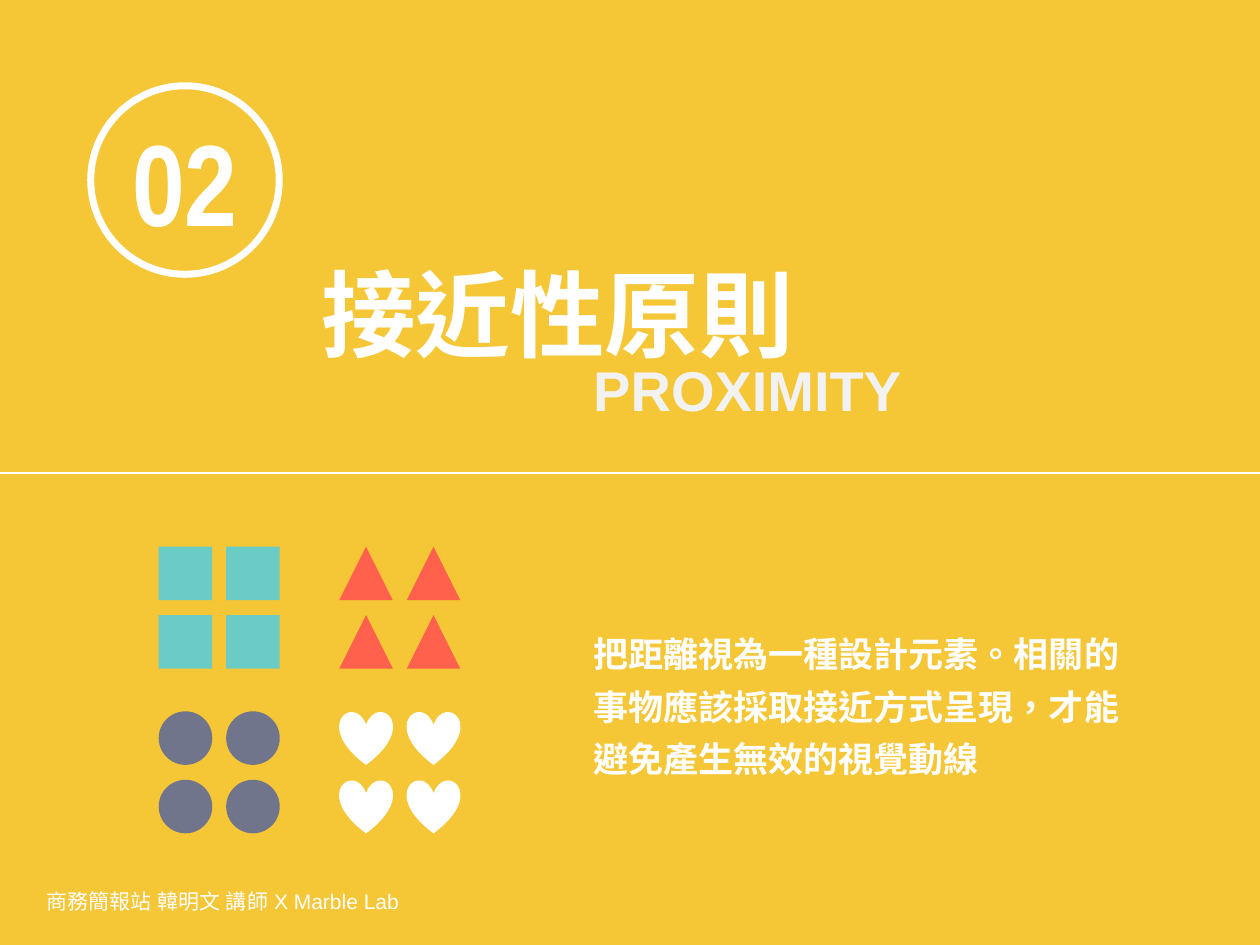
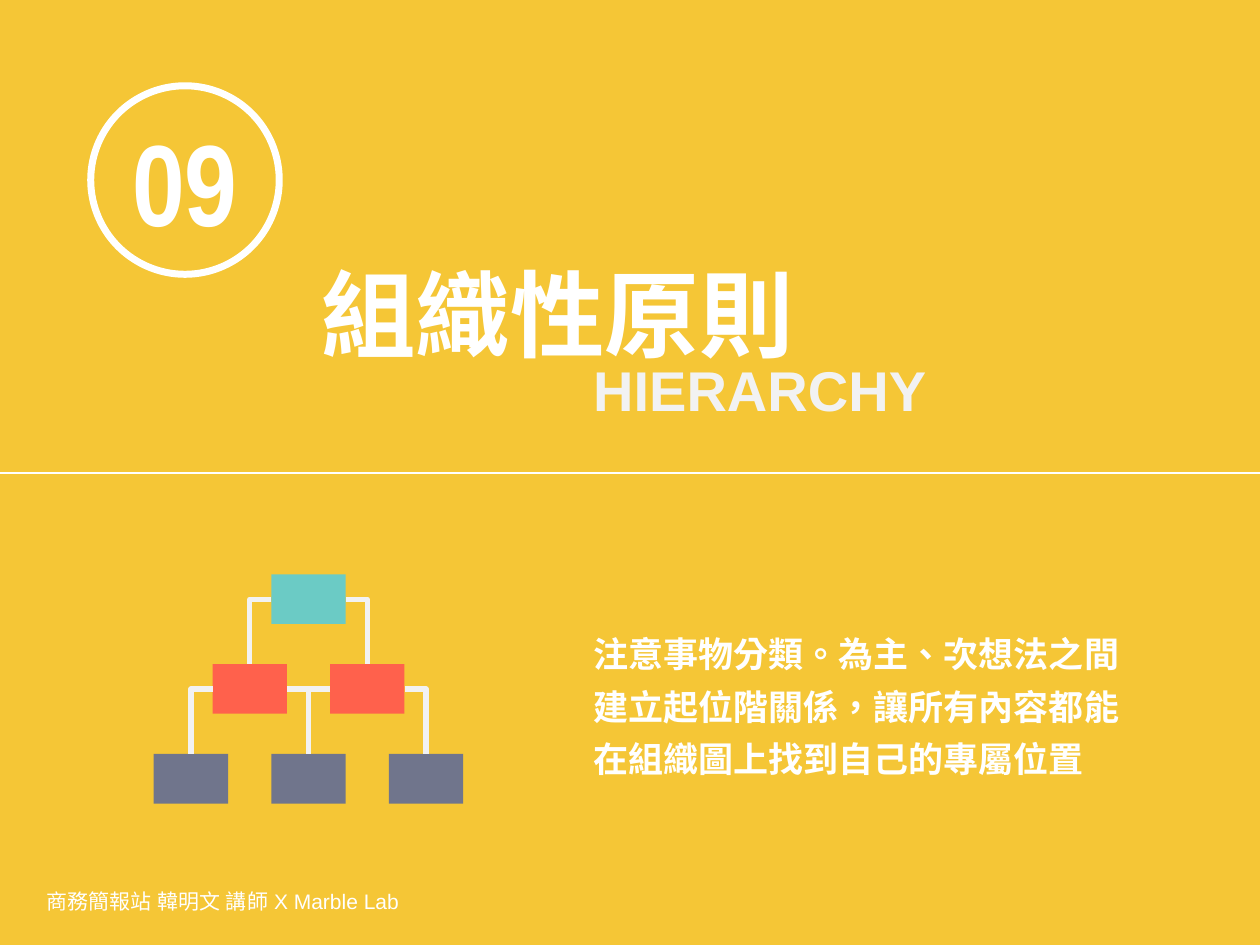
from dataclasses import dataclass

import pptx
import pptx.dml.color
import pptx.enum.lang
import pptx.enum.shapes
import pptx.enum.text
import pptx.oxml
import pptx.oxml.ns
import pptx.util
from pptx.util import Cm

SHAPE = pptx.enum.shapes.MSO_SHAPE
CONNECTOR = pptx.enum.shapes.MSO_CONNECTOR
ANCHOR = pptx.enum.text.MSO_ANCHOR
ALIGN = pptx.enum.text.PP_ALIGN
AUTO_SIZE = pptx.enum.text.MSO_AUTO_SIZE
TITLE_ONLY = 5


@dataclass(frozen=True)
class Theme:
    yellow: str = "F5C636"
    white: str = "FFFFFF"
    pale: str = "F2F2F2"
    teal: str = "6BCBC5"
    coral: str = "FF614C"
    slate: str = "70758C"
    font: str = "Arial"
    number_font: str = "Arial Narrow"
    number_size: int = 66
    title_size: int = 54
    subtitle_size: int = 32
    body_size: int = 20
    body_spacing: int = 30
    footer_size: int = 12


@dataclass(frozen=True)
class Box:
    """A region of the slide, in centimetres."""
    left: float
    top: float
    width: float
    height: float

    def lengths(self):
        return Cm(self.left), Cm(self.top), Cm(self.width), Cm(self.height)


@dataclass(frozen=True)
class Principle:
    number: str
    title: str
    subtitle: str
    body: str


THEME = Theme()
PAGE = Box(0, 0, 25.4, 19.05)
HEADER_BOX = Box(0, 0, 25.4, 9.53)
BODY_BOX = Box(11.71, 12.42, 11.5, 3.45)
FOOTER_BOX = Box(0.69, 17.65, 12.01, 1.02)
CLUSTERS_BOX = Box(3.2, 11.02, 6.08, 5.78)
TREE_BOX = Box(3.1, 11.58, 6.24, 4.62)
FOOTER_TEXT = "商務簡報站 韓明文 講師 X Marble Lab"


# Shared helpers
def rgb(color):
    return pptx.dml.color.RGBColor.from_string(color)


def write(shape, text, size, color=THEME.white, font=THEME.font, bold=True,
          align=ALIGN.LEFT, anchor=ANCHOR.TOP, wrap=True):
    frame = shape.text_frame
    frame.word_wrap = wrap
    frame.vertical_anchor = anchor
    paragraph = frame.paragraphs[0]
    paragraph.alignment = align
    run = paragraph.add_run()
    run.text = text
    run.font.size = pptx.util.Pt(size)
    run.font.bold = bold
    run.font.color.rgb = rgb(color)
    run.font.name = font
    run.font.language_id = pptx.enum.lang.MSO_LANGUAGE_ID.TRADITIONAL_CHINESE
    # East Asian typeface
    properties = run.font._element
    east_asian = properties.makeelement(pptx.oxml.ns.qn("a:ea"), {"typeface": font})
    properties.append(east_asian)
    return paragraph


def add_text(slide, box, text, size, **options):
    shape = slide.shapes.add_textbox(*box.lengths())
    return write(shape, text, size, **options)


def add_symbol(shapes, kind, box, color):
    shape = shapes.add_shape(kind, *box.lengths())
    shape.shadow.inherit = False
    shape.fill.solid()
    shape.fill.fore_color.rgb = rgb(color)
    shape.line.fill.background()
    return shape


def style_connector(connector, color, width):
    connector.line.color.rgb = rgb(color)
    connector.line.width = pptx.util.Pt(width)
    properties = connector._element.spPr
    properties.append(properties.makeelement(pptx.oxml.ns.qn("a:effectLst"), {}))


# Regions
def add_header(slide, box, principle):
    # Numbered ring
    ring_box = Box(box.left + 1.83, box.top + 1.73, 3.8, 3.8)
    ring = slide.shapes.add_shape(SHAPE.OVAL, *ring_box.lengths())
    ring.shadow.inherit = False
    ring.fill.background()
    ring.line.color.rgb = rgb(THEME.white)
    ring.line.width = pptx.util.Pt(4)
    write(ring, principle.number, THEME.number_size, font=THEME.number_font,
          align=ALIGN.CENTER, anchor=ANCHOR.MIDDLE, wrap=False)

    # Title and English subtitle
    title = slide.shapes.title
    title_box = Box(box.left + 6.22, box.top + 5.03, 10.97, 2.57)
    title.left, title.top, title.width, title.height = title_box.lengths()
    write(title, principle.title, THEME.title_size)
    title.text_frame.auto_size = AUTO_SIZE.SHAPE_TO_FIT_TEXT
    subtitle_box = Box(box.left + 11.71, box.top + 7.04, 8.5, 1.63)
    add_text(slide, subtitle_box, principle.subtitle, THEME.subtitle_size,
             color=THEME.pale)

    # Rule across the bottom of the header
    bottom = Cm(box.top + box.height)
    rule = slide.shapes.add_connector(CONNECTOR.STRAIGHT, Cm(box.left), bottom,
                                      Cm(box.left + box.width), bottom)
    style_connector(rule, THEME.white, 1)


def add_body(slide, box, text):
    paragraph = add_text(slide, box, text, THEME.body_size)
    paragraph.line_spacing = pptx.util.Pt(THEME.body_spacing)


def add_footer(slide, box):
    add_text(slide, box, FOOTER_TEXT, THEME.footer_size, bold=False,
             anchor=ANCHOR.MIDDLE)


def add_clusters(slide, box):
    """Four clusters of two by two symbols, one in each corner of the box."""
    size, column_step, row_step = 1.08, 1.36, 1.38
    right = box.width - size - column_step
    lower = box.height - size - row_step
    clusters = [
        (SHAPE.RECTANGLE, THEME.teal, 0, 0),
        (SHAPE.ISOSCELES_TRIANGLE, THEME.coral, right, 0),
        (SHAPE.OVAL, THEME.slate, 0, lower),
        (SHAPE.HEART, THEME.white, right, lower),
    ]
    for kind, color, cluster_left, cluster_top in clusters:
        for row in range(2):
            for column in range(2):
                symbol_box = Box(box.left + cluster_left + column * column_step,
                                 box.top + cluster_top + row * row_step, size, size)
                add_symbol(slide.shapes, kind, symbol_box, color)


def add_branch(shapes, parent, side, child):
    """Elbow from a side of the parent to the top of the child."""
    branch = shapes.add_connector(CONNECTOR.ELBOW, 0, 0, 0, 0)
    branch.begin_connect(parent, side)
    branch.end_connect(child, 0)
    geometry = branch._element.spPr.find(pptx.oxml.ns.qn("a:prstGeom"))
    geometry.set("prst", "bentConnector2")
    style_connector(branch, THEME.pale, 3)


def add_tree(slide, box):
    """Pyramid of three levels, each level one node wider than the last."""
    colors = [THEME.teal, THEME.coral, THEME.slate]
    node_width, node_height = 1.5, 1
    column_step = (box.width - node_width) / (len(colors) - 1)
    row_step = (box.height - node_height) / (len(colors) - 1)
    shapes = slide.shapes.add_group_shape().shapes

    levels = []
    for row, color in enumerate(colors):
        row_left = box.left + (len(colors) - 1 - row) * column_step / 2
        levels.append([
            add_symbol(shapes, SHAPE.RECTANGLE,
                       Box(row_left + column * column_step,
                           box.top + row * row_step, node_width, node_height),
                       color)
            for column in range(row + 1)])

    for parents, children in zip(levels, levels[1:]):
        for index, parent in enumerate(parents):
            add_branch(shapes, parent, 1, children[index])
            add_branch(shapes, parent, 3, children[index + 1])


# Slides
def add_principle_slide(presentation, principle, add_diagram, diagram_box):
    slide = presentation.slides.add_slide(presentation.slide_layouts[TITLE_ONLY])
    add_footer(slide, FOOTER_BOX)
    add_header(slide, HEADER_BOX, principle)
    add_diagram(slide, diagram_box)
    add_body(slide, BODY_BOX, principle.body)


def main():
    presentation = pptx.Presentation()
    presentation.slide_width = Cm(PAGE.width)
    presentation.slide_height = Cm(PAGE.height)
    background = presentation.slide_master.background.fill
    background.solid()
    background.fore_color.rgb = rgb(THEME.yellow)

    proximity = Principle(
        "02", "接近性原則", "PROXIMITY",
        "把距離視為一種設計元素。相關的事物應該採取接近方式呈現，才能避免產生無效的視覺動線")
    hierarchy = Principle(
        "09", "組織性原則", "HIERARCHY",
        "注意事物分類。為主、次想法之間建立起位階關係，讓所有內容都能在組織圖上找到自己的專屬位置")
    add_principle_slide(presentation, proximity, add_clusters, CLUSTERS_BOX)
    add_principle_slide(presentation, hierarchy, add_tree, TREE_BOX)
    presentation.save("out.pptx")


if __name__ == "__main__":
    main()
